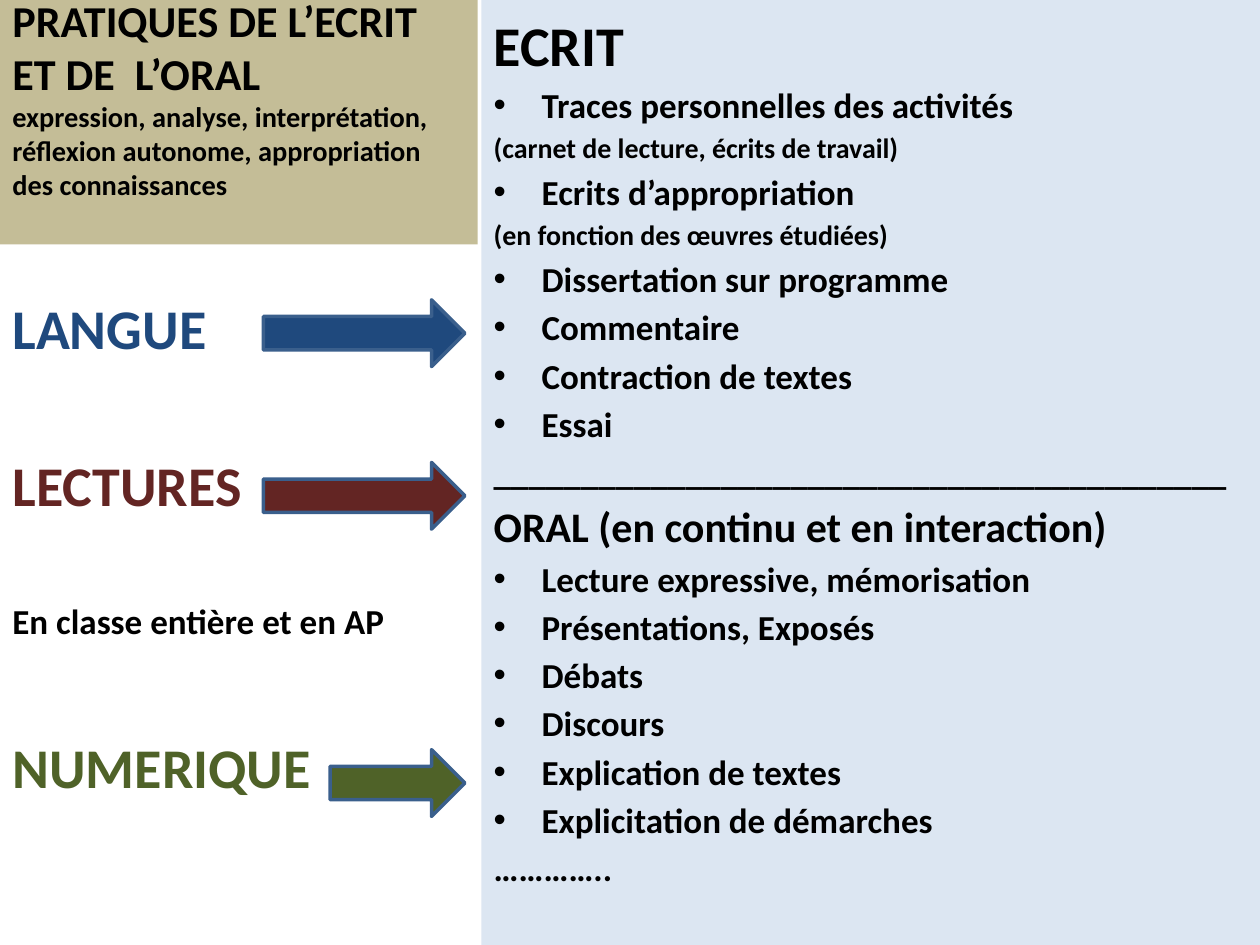
import pptx
import pptx.util
import pptx.dml.color
import pptx.enum.shapes
import pptx.enum.text
import pptx.oxml.ns
import lxml.etree

Inches = pptx.util.Inches
Pt = pptx.util.Pt
SHAPES = pptx.enum.shapes.MSO_SHAPE
ANCHOR = pptx.enum.text.MSO_ANCHOR
COLORS = {
    "text": "000000",
    "heading_panel": "C4BD97",
    "practice_panel": "DCE6F2",
    "langue": "1F497D",
    "lectures": "632523",
    "numerique": "4F6228",
    "arrow_edge": "3A5F8C",
}


def line(text, size=20, color="text", before=None, bullet=False):
    space = round(size * 0.18, 2) if before is None else before
    return {"text": text, "size": size, "color": color, "before": space, "bullet": bullet}


def bullets(*texts):
    return [line(text, bullet=True) for text in texts]


class SlideBuilder:
    font = "Calibri"
    indent = Inches(0.38)

    def __init__(self, slide):
        self.slide = slide

    def rgb(self, name):
        return pptx.dml.color.RGBColor.from_string(COLORS[name])

    def fill_frame(self, frame, lines, anchor, top, bottom):
        frame.word_wrap = True
        frame.vertical_anchor = anchor
        frame.margin_top, frame.margin_bottom = Inches(top), Inches(bottom)
        for index, item in enumerate(lines):
            paragraph = frame.add_paragraph() if index else frame.paragraphs[0]
            paragraph.alignment = pptx.enum.text.PP_ALIGN.LEFT
            paragraph.space_before = Pt(item["before"])
            if item["bullet"]:
                self.add_bullet(paragraph)
            run = paragraph.add_run()
            run.text = item["text"]
            run.font.name = self.font
            run.font.size = Pt(item["size"])
            run.font.bold = True
            run.font.color.rgb = self.rgb(item["color"])

    def add_bullet(self, paragraph):
        properties = paragraph._p.get_or_add_pPr()
        properties.set("marL", str(self.indent))
        properties.set("indent", str(-self.indent))
        qn = pptx.oxml.ns.qn
        lxml.etree.SubElement(properties, qn("a:buFont")).set("typeface", "Arial")
        lxml.etree.SubElement(properties, qn("a:buChar")).set("char", "•")

    def shape(self, kind, box, fill):
        shape = self.slide.shapes.add_shape(kind, *map(Inches, box))
        shape.shadow.inherit = False
        shape.fill.solid()
        shape.fill.fore_color.rgb = self.rgb(fill)
        return shape

    def panel(self, box, fill, lines, anchor=ANCHOR.TOP, top=0.05, bottom=0.05):
        panel = self.shape(SHAPES.RECTANGLE, box, fill)
        panel.line.fill.background()
        self.fill_frame(panel.text_frame, lines, anchor, top, bottom)

    def text(self, box, lines, top=0.05):
        label = self.slide.shapes.add_textbox(*map(Inches, box))
        self.fill_frame(label.text_frame, lines, ANCHOR.TOP, top, 0.05)

    def arrow(self, left, top, fill, tip=3.69, height=0.53):
        arrow = self.shape(SHAPES.RIGHT_ARROW, (left, top, tip - left, height), fill)
        arrow.line.color.rgb = self.rgb("arrow_edge")
        arrow.line.width = Pt(2)


def main():
    deck = pptx.Presentation()
    deck.slide_width, deck.slide_height = Inches(10), Inches(7.5)
    builder = SlideBuilder(deck.slides.add_slide(deck.slide_layouts[6]))

    heading = [
        line("PRATIQUES DE L’ECRIT", 25.2, before=0),
        line("ET DE  L’ORAL", 25.2, before=0),
        line("expression, analyse, interprétation, réflexion autonome, "
             "appropriation des connaissances", 16.2, before=0),
    ]
    builder.panel((0, 0, 3.79, 1.94), "heading_panel", heading, ANCHOR.BOTTOM, bottom=0.34)

    practices = [
        line("ECRIT", 32, before=0),
        *bullets("Traces personnelles des activités"),
        line("(carnet de lecture, écrits de travail)", 16),
        *bullets("Ecrits d’appropriation"),
        line("(en fonction des œuvres étudiées)", 16),
        *bullets("Dissertation sur programme", "Commentaire",
                 "Contraction de textes", "Essai"),
        line("_" * 42),
        line("ORAL (en continu et en interaction)", 24),
        *bullets("Lecture expressive, mémorisation", "Présentations, Exposés",
                 "Débats", "Discours", "Explication de textes",
                 "Explicitation de démarches"),
        line("………….."),
    ]
    builder.panel((3.82, 0, 6.18, 7.5), "practice_panel", practices, top=0.08)

    supports = [
        line("LANGUE", 32, "langue", before=0),
        line("LECTURES", 32, "lectures", before=51.2),
        line("En classe entière et en AP", before=46.6),
        line("NUMERIQUE", 32, "numerique", before=52.2),
    ]
    builder.text((0, 1.94, 3.82, 5.56), supports, top=0.39)

    for left, top, theme in [(2.09, 2.38, "langue"), (2.09, 3.67, "lectures"),
                             (2.62, 5.95, "numerique")]:
        builder.arrow(left, top, theme)

    deck.save("out.pptx")


if __name__ == "__main__":
    main()
